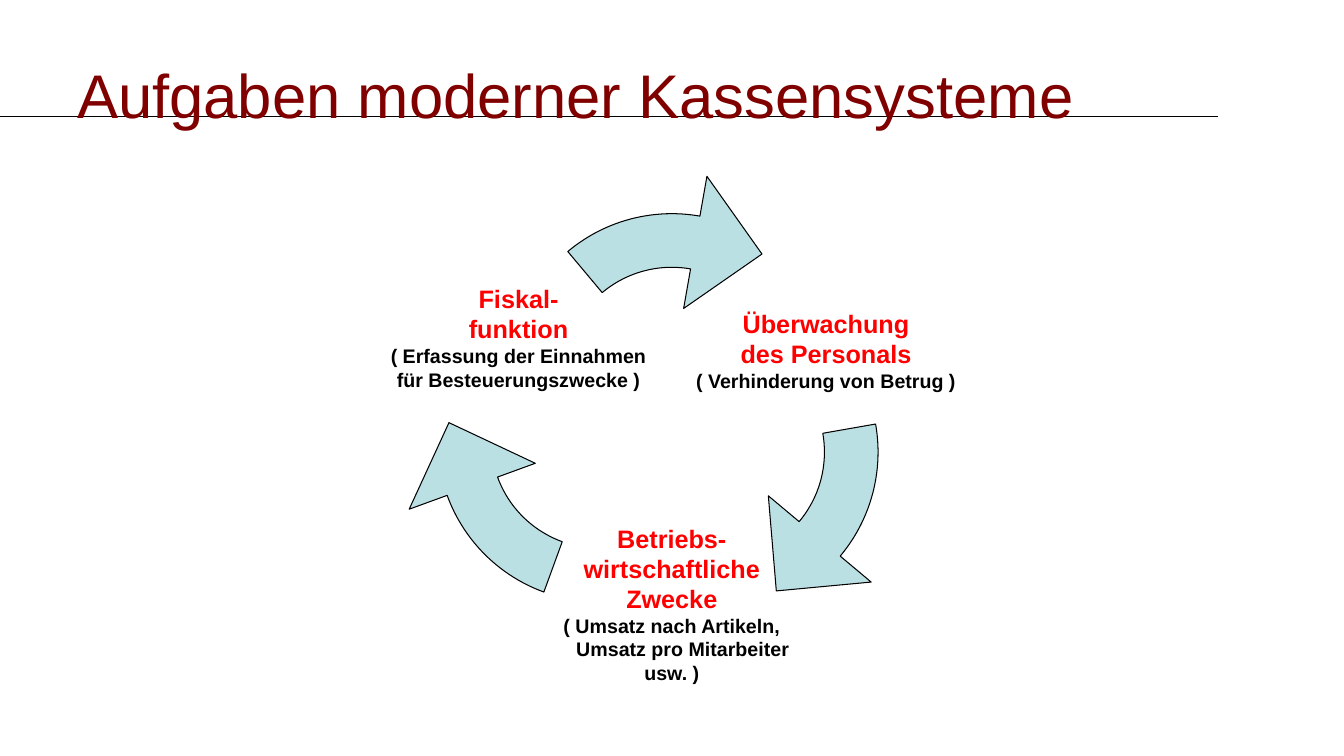
from math import cos, radians, sin

from lxml import etree
from pptx import Presentation
from pptx.dml.color import RGBColor
from pptx.enum.shapes import MSO_CONNECTOR
from pptx.enum.text import MSO_ANCHOR, PP_ALIGN
from pptx.oxml.ns import qn
from pptx.util import Inches, Pt

STRAIGHT = MSO_CONNECTOR.STRAIGHT
MIDDLE = MSO_ANCHOR.MIDDLE
LEFT, CENTER = PP_ALIGN.LEFT, PP_ALIGN.CENTER

COLORS = {"title": "800000", "heading": "FF0000", "detail": "000000",
          "line": "000000", "arrow": "BBE0E3"}
FORMATS = {
    "title": {"size": Pt(44), "bold": False},
    "heading": {"size": Pt(18), "bold": True},
    "detail": {"size": Pt(14), "bold": True},
}
COLUMNS, ROWS = 160, 90
LABEL_WIDTH, LABEL_HEIGHT = 34.8, 15.5
DETAIL_INDENT = 2.6

ARROW_CENTERS = [(79.98, 44.7), (85.26, 53.82), (71.34, 52.38)]
INNER, OUTER = 12.88, 19.26
TAIL, NECK = 230, 280
HEAD = [(24.08, NECK), (18.01, 306.6), (8.1, NECK)]

LABELS = [
    (98.34, 33.96, [
        ("Überwachung", "heading", 0),
        ("des Personals", "heading", 0),
        ("( Verhinderung von Betrug )", "detail", 0),
    ]),
    (79.98, 64.1, [
        ("Betriebs-", "heading", 0),
        ("wirtschaftliche", "heading", 0),
        ("Zwecke", "heading", 0),
        ("( Umsatz nach Artikeln,", "detail", 0),
        ("Umsatz pro Mitarbeiter", "detail", DETAIL_INDENT),
        ("usw. )", "detail", 0),
    ]),
    (61.74, 32.4, [
        ("Fiskal-", "heading", 0),
        ("funktion", "heading", 0),
        ("( Erfassung der Einnahmen", "detail", 0),
        ("für Besteuerungszwecke )", "detail", 0),
    ]),
]


class SlideBuilder:
    font_name = "Arial"
    line_width = Pt(0.75)

    def __init__(self, presentation):
        self.slide = presentation.slides.add_slide(presentation.slide_layouts[6])
        self.column = presentation.slide_width / COLUMNS
        self.row = presentation.slide_height / ROWS

    def x(self, columns):
        return round(columns * self.column)

    def y(self, rows):
        return round(rows * self.row)

    def color(self, name):
        return RGBColor.from_string(COLORS[name])

    def outline(self, line):
        line.color.rgb = self.color("line")
        line.width = self.line_width

    def rule(self, left, right, row):
        connector = self.slide.shapes.add_connector(
            STRAIGHT, self.x(left), self.y(row), self.x(right), self.y(row))
        self.outline(connector.line)
        etree.SubElement(connector._element.spPr, qn("a:effectLst"))

    def text(self, left, top, width, height, lines, alignment, margins):
        box = self.slide.shapes.add_textbox(
            self.x(left), self.y(top), self.x(width), self.y(height))
        frame = box.text_frame
        frame_format = {"word_wrap": True, "vertical_anchor": MIDDLE, **margins}
        for name, value in frame_format.items():
            setattr(frame, name, value)
        for index, (words, style, indent) in enumerate(lines):
            paragraph = frame.add_paragraph() if index else frame.paragraphs[0]
            paragraph.alignment = alignment
            if indent:
                paragraph._p.get_or_add_pPr().set("marL", str(self.x(indent)))
            run = paragraph.add_run()
            run.text = words
            for name, value in {"name": self.font_name, **FORMATS[style]}.items():
                setattr(run.font, name, value)
            run.font.color.rgb = self.color(style)

    def title(self, words):
        self.text(8, 4.3, 134.4, 13.7, [(words, "title", 0)], LEFT, {})

    def label(self, center, top, lines):
        margins = {f"margin_{side}": 0 for side in ("left", "top", "right", "bottom")}
        self.text(center - LABEL_WIDTH / 2, top, LABEL_WIDTH, LABEL_HEIGHT,
                  lines, CENTER, margins)

    def path_point(self, outline, command, radius, angle):
        segment = etree.SubElement(outline, qn(f"a:{command}"))
        direction = radians(angle)
        etree.SubElement(segment, qn("a:pt"), {
            "x": str(self.x(OUTER + radius * cos(direction))),
            "y": str(self.y(OUTER + radius * sin(direction)))})

    def path_arc(self, outline, radius, start, end):
        etree.SubElement(outline, qn("a:arcTo"), {
            "wR": str(self.x(radius)), "hR": str(self.y(radius)),
            "stAng": str(start * 60000), "swAng": str((end - start) * 60000)})

    def arrow(self, center, rotation):
        column, row = center
        left, top = self.x(column - OUTER), self.y(row - OUTER)
        width, height = self.x(2 * OUTER), self.y(2 * OUTER)
        builder = self.slide.shapes.build_freeform(left, top)
        builder.add_line_segments([(left + width, top + height)], close=True)
        shape = builder.convert_to_shape()
        outline = shape._element.spPr.find(".//" + qn("a:path"))
        for segment in list(outline):
            outline.remove(segment)
        self.path_point(outline, "moveTo", INNER, NECK)
        self.path_arc(outline, INNER, NECK, TAIL)
        self.path_point(outline, "lnTo", OUTER, TAIL)
        self.path_arc(outline, OUTER, TAIL, NECK)
        for radius, angle in HEAD:
            self.path_point(outline, "lnTo", radius, angle)
        etree.SubElement(outline, qn("a:close"))
        shape.rotation = rotation
        shape.shadow.inherit = False
        shape.fill.solid()
        shape.fill.fore_color.rgb = self.color("arrow")
        self.outline(shape.line)


def main():
    presentation = Presentation()
    presentation.slide_width = Inches(13.33)
    presentation.slide_height = Inches(7.5)
    builder = SlideBuilder(presentation)
    builder.rule(0, 145, 13.85)
    builder.title("Aufgaben moderner Kassensysteme")
    for index, center in enumerate(ARROW_CENTERS):
        builder.arrow(center, index * 360 / len(ARROW_CENTERS))
    for center, top, lines in LABELS:
        builder.label(center, top, lines)
    presentation.save("out.pptx")


if __name__ == "__main__":
    main()
